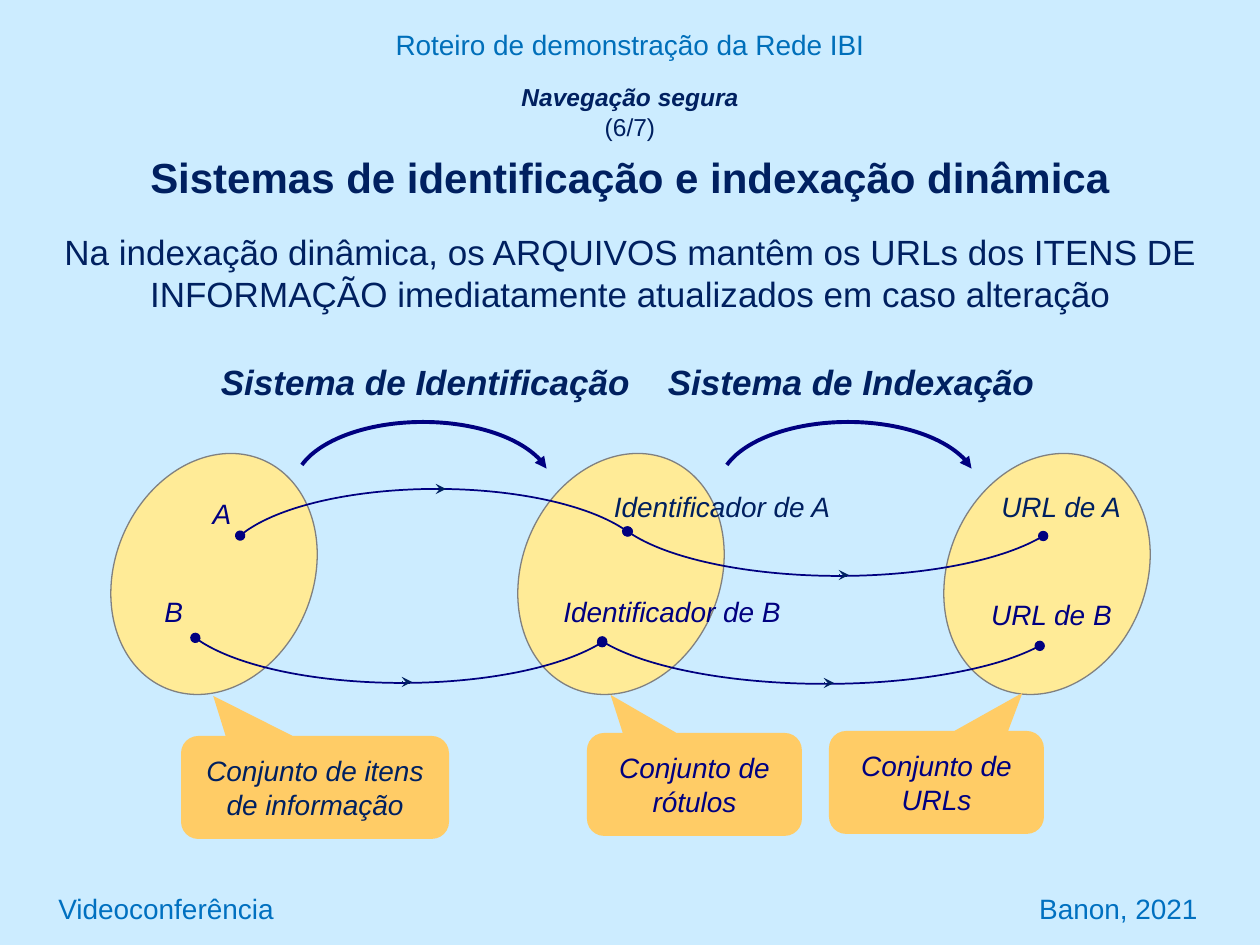
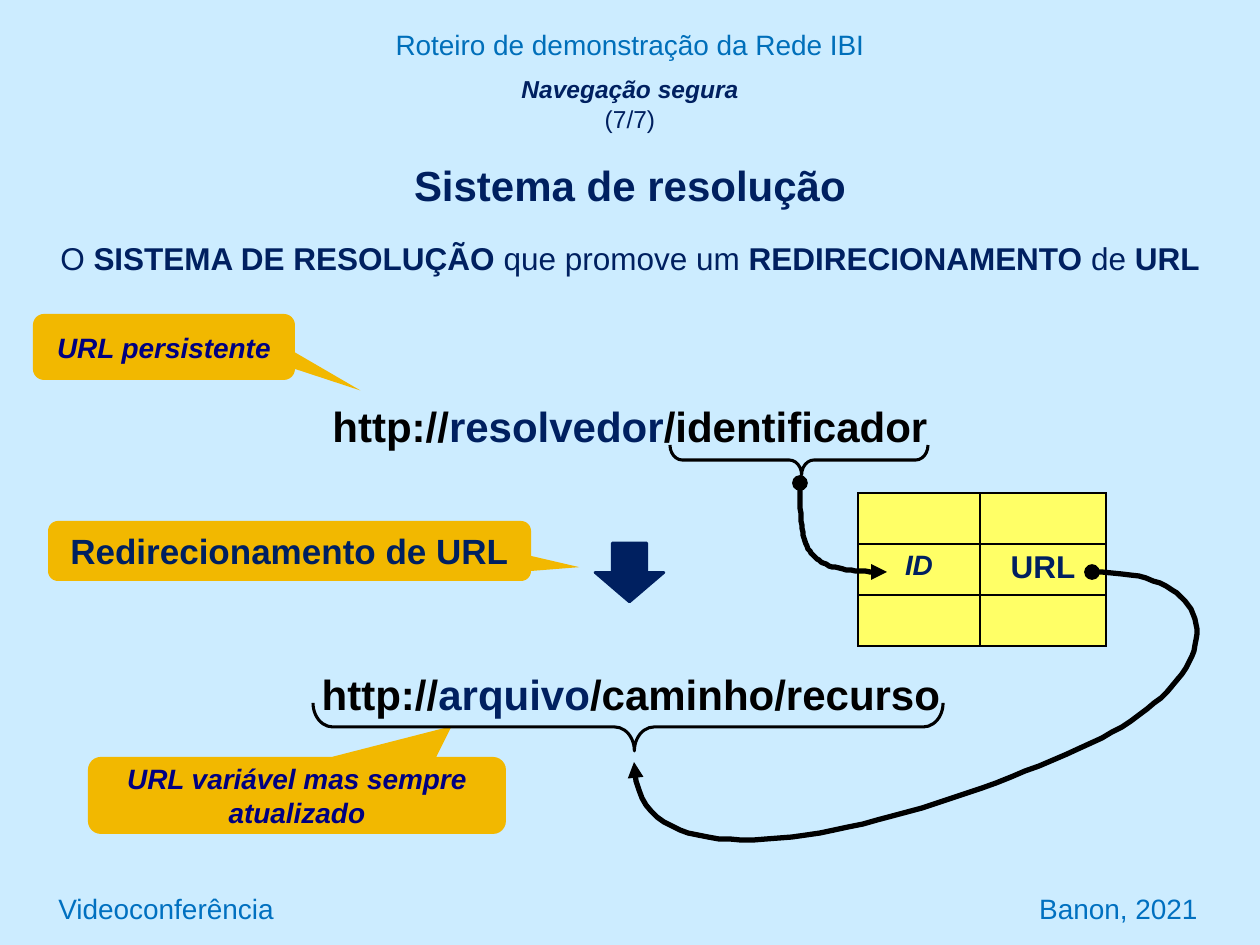
"""Build two slides on identification, indexing and resolution systems."""
import lxml.etree
import pptx
import pptx.dml.color
import pptx.enum.shapes
import pptx.enum.text
import pptx.oxml.ns
import pptx.util

SCALE = 914400 / 126
KINDS = pptx.enum.shapes.MSO_SHAPE
ALIGN = pptx.enum.text.PP_ALIGN
MIDDLE = pptx.enum.text.MSO_ANCHOR.MIDDLE
qn = pptx.oxml.ns.qn
SKY, DEEP, NAVY, BLACK = "CCECFF", "002060", "000080", "000000"
CREAM, PEACH, GOLD, LEMON = "FFEB97", "FFCC66", "F2B800", "FFFF66"


def paint(fill, hue):
    fill.solid()
    fill.fore_color.rgb = pptx.dml.color.RGBColor.from_string(hue)


def put(page, kind, box, words="", size=16, hue=DEEP, bold=False, ital=False):
    place = [round(n * SCALE) for n in box]
    if kind is None:
        shape = page.shapes.add_textbox(*place)
    else:
        shape = page.shapes.add_shape(kind, *place)
        shape.shadow.inherit = False
        shape.fill.background()
        shape.line.fill.background()
    frame = shape.text_frame
    frame.word_wrap = True
    frame.text = words
    for para in frame.paragraphs:
        para.alignment = ALIGN.CENTER
        for run in para.runs:
            font = run.font
            font.name, font.size = "Arial", pptx.util.Pt(size)
            font.bold, font.italic = bold, ital
            paint(font.fill, hue)
    return shape


deck = pptx.Presentation()
deck.slide_width = round(1260 * SCALE)
deck.slide_height = round(945 * SCALE)
tips = []

pages = []
for step, title, top, gap in [
    ("(6/7)", "Sistemas de identificação e indexação dinâmica", 76, 6),
    ("(7/7)", "Sistema de resolução", 68, 15),
]:
    page = deck.slides.add_slide(deck.slide_layouts[6])
    pages.append(page)
    paint(page.background.fill, SKY)
    put(page, None, (0, 21, 1260, 47), "Roteiro de demonstração da Rede IBI", hue="006FBA")
    for left, words, side in [
        (46, "Videoconferência", ALIGN.LEFT),
        (910, "Banon, 2021", ALIGN.RIGHT),
    ]:
        foot = put(page, None, (left, 882, 300, 53), words, hue="0070C0")
        foot.text_frame.vertical_anchor = MIDDLE
        foot.text_frame.paragraphs[0].alignment = side
    head = put(page, None, (94, top, 1072, 130), f"Navegação segura\v{step}\n{title}", 14, bold=True)
    small, big = head.text_frame.paragraphs
    small.runs[0].font.italic = True
    small.runs[1].font.bold = False
    big.space_before = pptx.util.Pt(gap)
    big.runs[0].font.size = pptx.util.Pt(24)

first, second = pages

for left in (115, 522, 948):
    oval = put(first, KINDS.OVAL, (left, 450, 198, 248))
    oval.rotation = 23
    paint(oval.fill, CREAM)
    paint(oval.line.fill, "808080")
    oval.line.width = pptx.util.Pt(0.75)

thin = (113.27, 209.83, 1, "oval", "oval")
wide = (114.33, 210.79, 2.25, None, "triangle")
for box, flip, look in [
    ((294, 422, 258, 131), False, wide),
    ((719, 422, 258, 131), False, wide),
    ((223, 489, 427, 154), False, thin),
    ((175, 529, 454, 154), True, thin),
    ((606, 422, 466, 154), True, thin),
    ((576, 530, 498, 154), True, thin),
]:
    start, end, width, head, tail = look
    arc = put(first, KINDS.ARC, box)
    arc.adjustments[0], arc.adjustments[1] = start, end
    paint(arc.line.fill, NAVY)
    arc.line.width = pptx.util.Pt(width)
    if flip:
        arc.element.spPr.xfrm.set("flipV", "1")
    tips.append((arc, head, tail))

for left, top in [(436, 489), (402, 682), (839, 575), (824, 683)]:
    ends = [round(n * SCALE) for n in (left, top, left + 10, top)]
    dart = first.shapes.add_connector(pptx.enum.shapes.MSO_CONNECTOR.STRAIGHT, *ends)
    paint(dart.line.fill, DEEP)
    dart.line.width = pptx.util.Pt(0.75)
    lxml.etree.SubElement(dart.element.spPr, qn("a:effectLst"))
    tips.append((dart, None, "stealth"))

for box, words, size, hue, bold in [
    ((200, 490, 44, 50), "A", 16, NAVY, False),
    ((152, 588, 43, 50), "B", 16, NAVY, False),
    ((596, 483, 252, 47), "Identificador de A", 16, DEEP, False),
    ((549, 588, 246, 47), "Identificador de B", 16, NAVY, False),
    ((988, 483, 146, 47), "URL de A", 16, DEEP, False),
    ((978, 591, 147, 47), "URL de B", 16, NAVY, False),
    ((207, 354, 437, 55), "Sistema de Identificação", 20, DEEP, True),
    ((654, 354, 394, 55), "Sistema de Indexação", 20, DEEP, True),
]:
    label = put(first, None, box, words, size, hue, bold, True)
    label.text_frame.word_wrap = False

put(
    first, None, (35, 224, 1191, 97),
    "Na indexação dinâmica, os ARQUIVOS mantêm os URLs dos ITENS DE INFORMAÇÃO "
    "imediatamente atualizados em caso alteração", 20,
)

for top, left, width, size, parts in [
    (233, 20, 1220, 18, [
        ("O ", False, DEEP), ("SISTEMA DE RESOLUÇÃO ", True, DEEP),
        ("que promove um ", False, DEEP), ("REDIRECIONAMENTO", True, DEEP),
        (" de ", False, DEEP), ("URL", True, DEEP),
    ]),
    (662, 265, 732, 24, [
        ("http://", True, BLACK), ("arquivo", True, DEEP), ("/caminho/recurso", True, BLACK),
    ]),
    (394, 315, 630, 24, [
        ("http://", True, BLACK), ("resolvedor", True, DEEP), ("/identificador", True, BLACK),
    ]),
]:
    para = put(second, None, (left, top, width, 63)).text_frame.paragraphs[0]
    for words, bold, hue in parts:
        run = para.add_run()
        run.text = words
        run.font.name, run.font.size = "Arial", pptx.util.Pt(size)
        run.font.bold = bold
        paint(run.font.fill, hue)

for page, box, tip, back, words, size, hue, bold, ital in [
    (first, (181, 736, 268, 103), (-0.38, -0.89), PEACH,
     "Conjunto de itens de informação", 16, DEEP, False, True),
    (first, (587, 733, 215, 103), (-0.39, -0.87), PEACH,
     "Conjunto de rótulos", 16, NAVY, False, True),
    (first, (829, 731, 215, 103), (0.4, -0.87), PEACH,
     "Conjunto de URLs", 16, NAVY, False, True),
    (second, (33, 314, 262, 66), (0.75, 0.66), GOLD,
     "URL persistente", 16, NAVY, True, True),
    (second, (88, 757, 418, 77), (0.37, -0.9), GOLD,
     "URL variável mas sempre atualizado", 16, NAVY, True, True),
    (second, (48, 521, 483, 60), (0.6, 0.27), GOLD,
     "Redirecionamento de URL", 20, DEEP, True, False),
]:
    note = put(page, KINDS.ROUNDED_RECTANGULAR_CALLOUT, box, words, size, hue, bold, ital)
    note.adjustments[0], note.adjustments[1] = tip
    note.text_frame.vertical_anchor = MIDDLE
    paint(note.fill, back)

arrow = put(second, KINDS.DOWN_ARROW, (595, 543, 69, 59))
paint(arrow.fill, DEEP)
paint(arrow.line.fill, DEEP)
arrow.line.width = pptx.util.Pt(1.5)

place = [round(n * SCALE) for n in (858, 493, 248, 153)]
grid = second.shapes.add_table(3, 2, *place).table
for col, width in zip(grid.columns, (122, 126)):
    col.width = round(width * SCALE)
for cell in grid.iter_cells():
    props = cell._tc.get_or_add_tcPr()
    for side in ("a:lnL", "a:lnR", "a:lnT", "a:lnB"):
        edge = lxml.etree.SubElement(props, qn(side), w="12700")
        fill = lxml.etree.SubElement(edge, qn("a:solidFill"))
        lxml.etree.SubElement(fill, qn("a:srgbClr"), val=BLACK)
    paint(cell.fill, LEMON)
for col, words, size, ital in [(0, "ID", 16, True), (1, "URL", 18, False)]:
    frame = grid.cell(1, col).text_frame
    frame.text = words
    para = frame.paragraphs[0]
    para.alignment = ALIGN.CENTER
    font = para.runs[0].font
    font.name, font.size = "Arial", pptx.util.Pt(size)
    font.bold, font.italic = True, ital
    paint(font.fill, DEEP)

for knots in [
    [(800, 483), (800, 558), (805, 571), (887, 572)],
    [(1092, 572), (1234, 571), (1234, 680), (1080, 748), (906, 827), (635, 901), (634, 762)],
]:
    dots = []
    for i in range(0, len(knots) - 1, 3):
        for k in range(1, 41):
            t = k / 40
            mix = ((1 - t) ** 3, 3 * t * (1 - t) ** 2, 3 * t * t * (1 - t), t ** 3)
            dots.append([sum(m * p[axis] for m, p in zip(mix, knots[i:i + 4])) for axis in (0, 1)])
    pen = second.shapes.build_freeform(*knots[0], scale=SCALE)
    pen.add_line_segments(dots, close=False)
    curve = pen.convert_to_shape()
    curve.shadow.inherit = False
    curve.fill.background()
    paint(curve.line.fill, BLACK)
    curve.line.width = pptx.util.Pt(3)
    tips.append((curve, "oval", "triangle"))

for box in [(604, 412, 48, 630), (784, 331, 30, 258)]:
    brace = put(second, KINDS.LEFT_BRACE, box)
    brace.rotation = 270
    brace.element.spPr.xfrm.set("flipV", "1")
    brace.adjustments[0], brace.adjustments[1] = 0.41, 0.49
    paint(brace.line.fill, BLACK)
    brace.line.width = pptx.util.Pt(1.75)

for shape, head, tail in tips:
    line = shape.element.spPr.find(qn("a:ln"))
    for tag, form in (("a:headEnd", head), ("a:tailEnd", tail)):
        if form:
            lxml.etree.SubElement(line, qn(tag), type=form)

deck.save("out.pptx")
